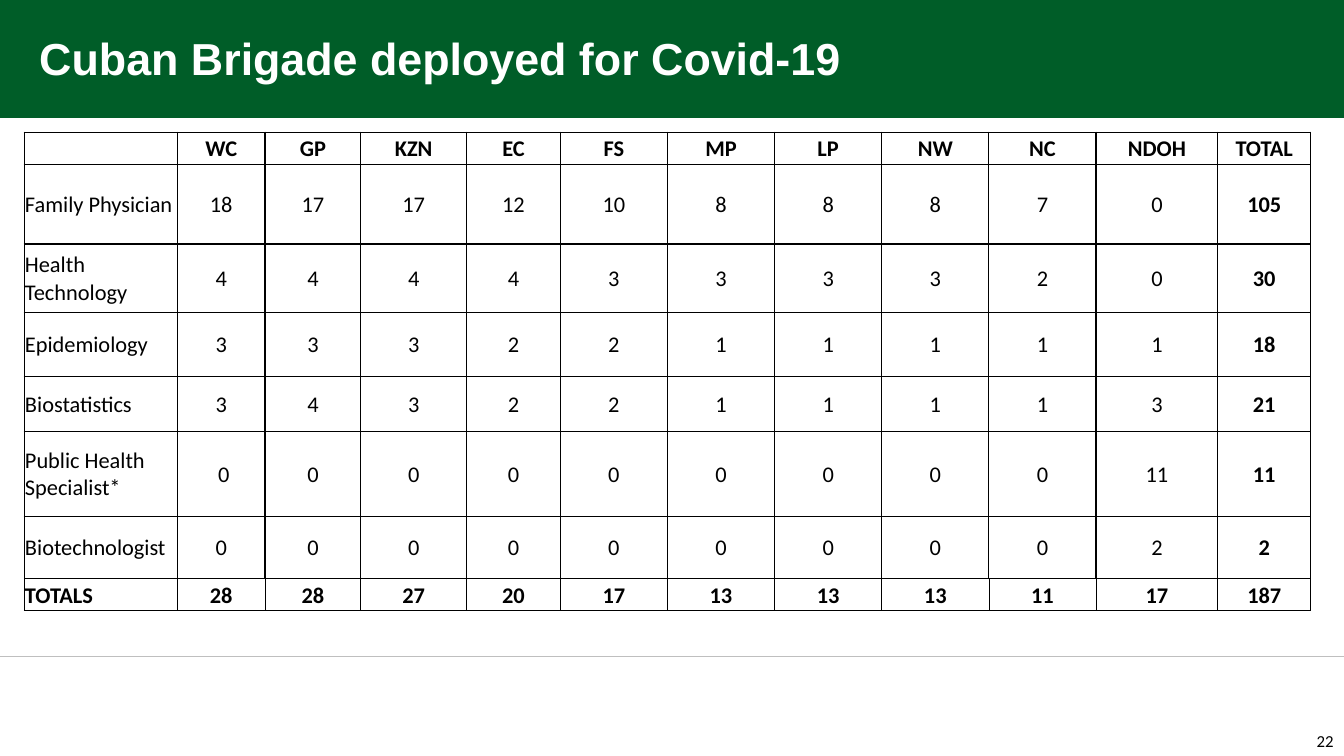
"""Build the slide on the Cuban Brigade deployed for Covid-19."""
from lxml import etree
from pptx import Presentation
from pptx.dml.color import RGBColor
from pptx.enum.shapes import MSO_CONNECTOR, MSO_SHAPE
from pptx.enum.text import MSO_ANCHOR, PP_ALIGN
from pptx.oxml import parse_xml
from pptx.oxml.ns import nsdecls, qn
from pptx.util import Cm, Pt

COLOURS = {"green": "005D28", "white": "FFFFFF", "black": "000000", "grey": "BFBFBF"}
COLUMN_WIDTHS = [3.86, 2.21, 2.41, 2.67, 2.36] + [2.7] * 5 + [3.07, 2.34]
ROW_HEIGHTS = [0.81, 2.01, 1.73, 1.6, 1.4, 2.13, 1.57, 0.79]
STAFF = [
    ["", "WC", "GP", "KZN", "EC", "FS", "MP", "LP", "NW", "NC", "NDOH", "TOTAL"],
    ["Family Physician", "18", "17", "17", "12", "10", "8", "8", "8", "7", "0", "105"],
    ["Health Technology", "4", "4", "4", "4", "3", "3", "3", "3", "2", "0", "30"],
    ["Epidemiology", "3", "3", "3", "2", "2", "1", "1", "1", "1", "1", "18"],
    ["Biostatistics", "3", "4", "3", "2", "2", "1", "1", "1", "1", "3", "21"],
    ["Public Health Specialist*", " 0", "0", "0", "0", "0", "0", "0", "0", "0", "11", "11"],
    ["Biotechnologist", "0", "0", "0", "0", "0", "0", "0", "0", "0", "2", "2"],
    ["TOTALS", "28", "28", "27", "20", "17", "13", "13", "13", "11", "17", "187"],
]
TEXTS = [
    ("Cuban Brigade deployed for Covid-19", (0.74, 0.33, 25.17, 2.24), MSO_ANCHOR.MIDDLE,
     PP_ALIGN.LEFT, "white", {"name": "Arial", "size": Pt(32), "bold": True}),
    ("22", (32.66, 18.34, 1.2, 0.71), MSO_ANCHOR.BOTTOM,
     PP_ALIGN.RIGHT, "black", {"name": "Calibri", "size": Pt(12), "bold": False}),
]


def write(para, words, align, colour, font):
    """Put one formatted run of words in a paragraph."""
    para.alignment = align
    span = para.add_run()
    span.text = words
    span.font.color.rgb = RGBColor.from_string(COLOURS[colour])
    for name, value in font.items():
        setattr(span.font, name, value)


def draw_border(cell, side, points):
    """Add a solid black border to one side of a cell."""
    cell._tc.get_or_add_tcPr().append(parse_xml(
        f'<a:ln{side} {nsdecls("a")} w="{Pt(points)}"><a:solidFill>'
        f'<a:srgbClr val="{COLOURS["black"]}"/></a:solidFill></a:ln{side}>'))


deck = Presentation()
deck.slide_width, deck.slide_height = Cm(33.87), Cm(19.05)
page = deck.slides.add_slide(deck.slide_layouts[6])

banner = page.shapes.add_shape(MSO_SHAPE.RECTANGLE, 0, 0, deck.slide_width, Cm(2.97))
banner.shadow.inherit = False
banner.fill.solid()
banner.fill.fore_color.rgb = RGBColor.from_string(COLOURS["green"])
banner.line.fill.background()

rule = page.shapes.add_connector(
    MSO_CONNECTOR.STRAIGHT, 0, Cm(16.54), deck.slide_width, Cm(16.54))
rule.line.color.rgb = RGBColor.from_string(COLOURS["grey"])
rule.line.width = Pt(0.75)
etree.SubElement(rule._element.spPr, qn("a:effectLst"))

for words, place, anchor, align, colour, font in TEXTS:
    box = page.shapes.add_textbox(*map(Cm, place))
    box.text_frame.word_wrap = True
    box.text_frame.vertical_anchor = anchor
    write(box.text_frame.paragraphs[0], words, align, colour, font)

table = page.shapes.add_table(
    len(STAFF), len(STAFF[0]), Cm(0.61), Cm(3.33),
    Cm(sum(COLUMN_WIDTHS)), Cm(sum(ROW_HEIGHTS))).table
table.first_row = table.horz_banding = False
for column, width in zip(table.columns, COLUMN_WIDTHS):
    column.width = Cm(width)
for row, height in zip(table.rows, ROW_HEIGHTS):
    row.height = Cm(height)

last_row, last_column = len(STAFF) - 1, len(STAFF[0]) - 1
for row_number, row in enumerate(STAFF):
    is_totals = row_number == last_row
    for column_number, words in enumerate(row):
        cell = table.cell(row_number, column_number)
        for side in "LRTB":
            is_thin = is_totals or (side == "B" and row_number == last_row - 1)
            draw_border(cell, side, 0.5 if is_thin else 1)
        cell.fill.background()
        cell_format = {
            "margin_left": Cm(0.02), "margin_right": Cm(0.02),
            "margin_top": Cm(0.02), "margin_bottom": 0,
            "vertical_anchor": MSO_ANCHOR.BOTTOM if is_totals else MSO_ANCHOR.MIDDLE,
        }
        for name, value in cell_format.items():
            setattr(cell, name, value)
        if words:
            is_bold = row_number in (0, last_row) or column_number == last_column
            write(cell.text_frame.paragraphs[0], words,
                  PP_ALIGN.CENTER if column_number else PP_ALIGN.LEFT, "black",
                  {"name": "Calibri", "size": Pt(16), "bold": is_bold})

deck.save("out.pptx")
